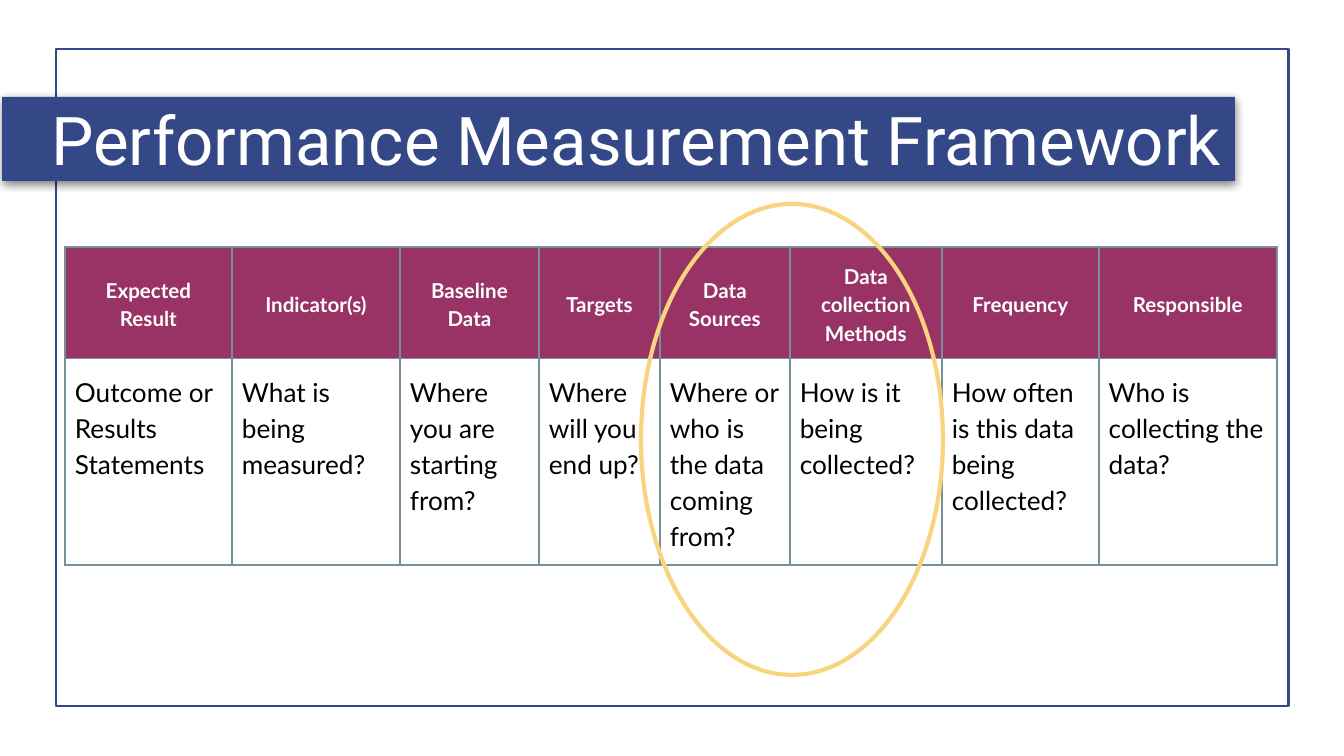
from lxml import etree
from pptx import Presentation
from pptx import util as u
from pptx.dml.color import RGBColor
from pptx.enum import shapes, text
from pptx.oxml import parse_xml
from pptx.oxml.ns import nsdecls, qn

PX = 914400 / 134.4
HUES = {"navy": "344888", "plum": "993365", "gold": "F9D380",
        "grid": "78909C", "white": "FFFFFF", "black": "000000"}
COLS = [
    (167, "Expected Result", "Outcome or Results Statements"),
    (168, "Indicator(s)", "What is being measured?"),
    (139, "Baseline Data", "Where you are starting from?"),
    (121, "Targets", "Where will you end up?"),
    (130, "Data Sources", "Where or who is the data coming from?"),
    (152, "Data collection Methods", "How is it being collected?"),
    (157, "Frequency", "How often is this data being collected?"),
    (178, "Responsible", "Who is collecting the data?"),
]
ROWS = [89, 153]


def px(n):
    return u.Emu(round(n * PX))


def hue(name):
    return RGBColor.from_string(HUES[name])


def add_run(para, words, font, size, color, bold=False):
    run = para.add_run()
    run.text = words
    run.font.name = font
    run.font.size = u.Pt(size)
    run.font.bold = bold
    run.font.color.rgb = hue(color)


def add_outline(slide, kind, box, color, width):
    shape = slide.shapes.add_shape(kind, *map(px, box))
    shape.shadow.inherit = False
    shape.fill.background()
    shape.line.color.rgb = hue(color)
    shape.line.width = u.Pt(width)


def add_shadow(shape):
    shape._element.spPr.append(parse_xml(
        f'<a:effectLst {nsdecls("a")}>'
        '<a:outerShdw blurRad="57150" dist="19050" dir="5400000" algn="bl" rotWithShape="0">'
        f'<a:srgbClr val="{HUES["black"]}"><a:alpha val="49000"/></a:srgbClr>'
        '</a:outerShdw></a:effectLst>'))


def set_title(slide, words, box):
    title = slide.shapes.title
    slide.shapes._spTree.append(title._element)  # bring in front of the frame
    title.left, title.top, title.width, title.height = map(px, box)
    title.fill.solid()
    title.fill.fore_color.rgb = hue("navy")
    add_shadow(title)
    frame = title.text_frame
    frame.word_wrap = True
    frame.auto_size = text.MSO_AUTO_SIZE.NONE
    frame.vertical_anchor = text.MSO_ANCHOR.MIDDLE
    frame.margin_left = frame.margin_right = px(13)
    frame.margin_top = frame.margin_bottom = px(13)
    para = frame.paragraphs[0]
    para.alignment = text.PP_ALIGN.RIGHT
    add_run(para, words, "Roboto", 36, "white")


def add_border(cell):
    props = cell._tc.get_or_add_tcPr()
    for side in ("a:lnL", "a:lnR", "a:lnT", "a:lnB"):
        line = etree.SubElement(props, qn(side), w=str(u.Pt(1)))
        fill = etree.SubElement(line, qn("a:solidFill"))
        etree.SubElement(fill, qn("a:srgbClr"), val=HUES["grid"])


def set_cell(cell, words, head):
    add_border(cell)
    cell.margin_left = cell.margin_right = px(10)
    cell.margin_top = cell.margin_bottom = px(13)
    para = cell.text_frame.paragraphs[0]
    para.line_spacing = 1.15
    if head:
        cell.fill.solid()
        cell.fill.fore_color.rgb = hue("plum")
        cell.vertical_anchor = text.MSO_ANCHOR.MIDDLE
        para.alignment = text.PP_ALIGN.CENTER
        add_run(para, words, "Lato", 11, "white", bold=True)
    else:
        cell.fill.background()
        cell.vertical_anchor = text.MSO_ANCHOR.TOP
        para.alignment = text.PP_ALIGN.LEFT
        add_run(para, words, "Lato", 14, "black")


def add_grid(slide, left, top):
    wide = sum(col[0] for col in COLS)
    table = slide.shapes.add_table(
        len(ROWS), len(COLS), px(left), px(top), px(wide), px(sum(ROWS))).table
    table.first_row = table.horz_banding = False
    for row, high in zip(table.rows, ROWS):
        row.height = px(high)
    for c, (width, *words) in enumerate(COLS):
        table.columns[c].width = px(width)
        for r, entry in enumerate(words):
            set_cell(table.cell(r, c), entry, head=r == 0)


def main():
    deck = Presentation()
    deck.slide_width, deck.slide_height = px(1344), px(756)
    slide = deck.slides.add_slide(deck.slide_layouts[5])
    kinds = shapes.MSO_SHAPE
    add_outline(slide, kinds.RECTANGLE, (56, 49, 1233, 657), "navy", 1.5)
    set_title(slide, "Performance Measurement Framework", (2, 97, 1233, 84))
    add_grid(slide, 65, 247)
    add_outline(slide, kinds.OVAL, (641, 204, 302, 471), "gold", 2.25)
    deck.save("out.pptx")


if __name__ == "__main__":
    main()
